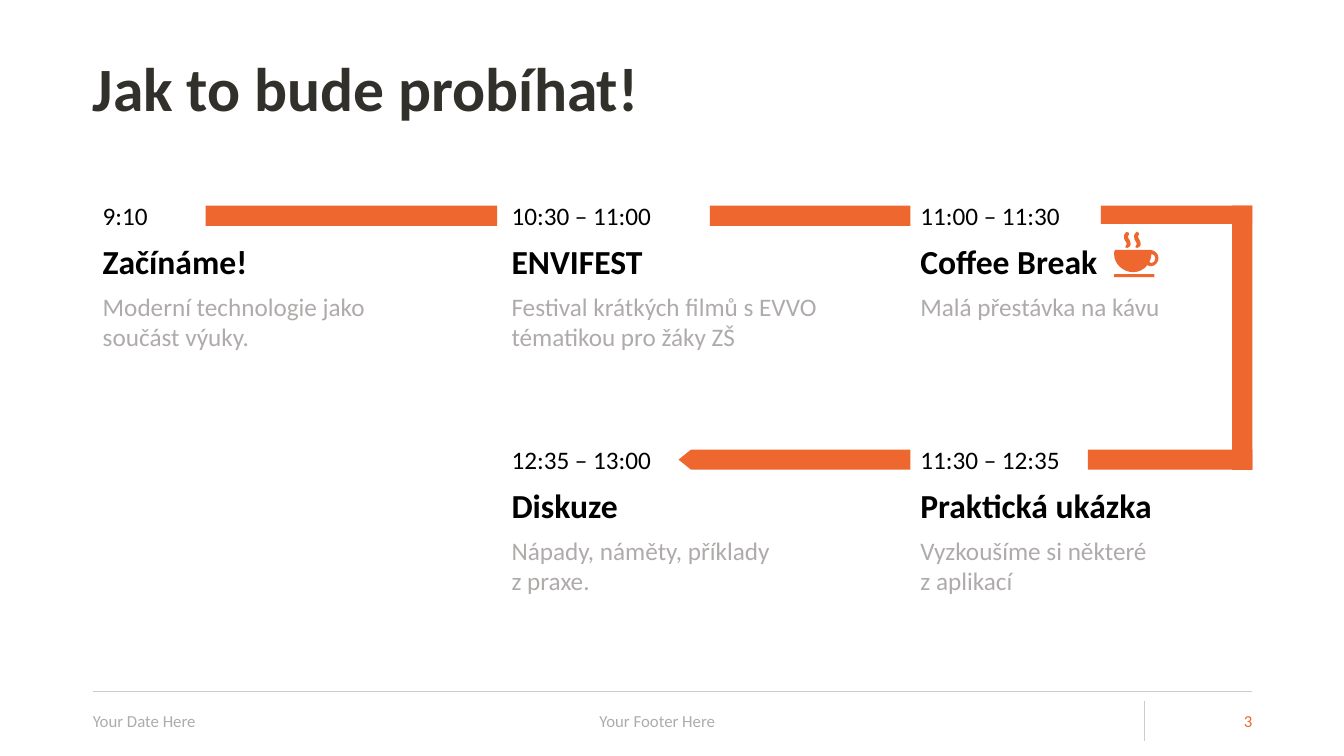
from pptx import Presentation
from pptx.dml.color import RGBColor
from pptx.enum.shapes import MSO_CONNECTOR, MSO_SHAPE
from pptx.enum.text import MSO_ANCHOR, PP_ALIGN
from pptx.oxml.ns import qn
from pptx.util import Inches, Pt

LINE = MSO_CONNECTOR.STRAIGHT
ARROW, RECT = MSO_SHAPE.PENTAGON, MSO_SHAPE.RECTANGLE
TOP, MIDDLE = MSO_ANCHOR.TOP, MSO_ANCHOR.MIDDLE
LEFT, CENTER, RIGHT = PP_ALIGN.LEFT, PP_ALIGN.CENTER, PP_ALIGN.RIGHT

HUE = {"title": "31302B", "black": "000000", "grey": "AFABAB",
       "orange": "EE672F", "rule": "CECDC7"}
FONT = "Calibri"

# Grid in inches: three columns, two rows
EDGE, END = 0.92, 12.42
WIDE, STEP = 3.39, 4.055
HEAD, DROP = 1.94, 2.42
THICK = 0.2
FOOT, TALL = 6.95, 0.4

# Column, row, time, name, detail
STOPS = [
    (0, 0, "9:10", "Začínáme!", "Moderní technologie jako součást výuky."),
    (1, 0, "10:30 – 11:00", "ENVIFEST",
     "Festival krátkých filmů s EVVO tématikou pro žáky ZŠ"),
    (2, 0, "11:00 – 11:30", "Coffee Break", "Malá přestávka na kávu"),
    (1, 1, "12:35 – 13:00", "Diskuze", "Nápady, náměty, příklady \nz praxe."),
    (2, 1, "11:30 – 12:35", "Praktická ukázka",
     "Vyzkoušíme si některé \nz aplikací"),
]

# Icon outlines in hundredths of an inch: a start, then curves of three
# points or lines of one
CUP = [
    [(19, 41), [(25, 41), (30, 38), (33, 34)], [(34, 35), (35, 35), (37, 35)],
     [(41, 35), (44, 31), (44, 27)], [(44, 23), (41, 20), (37, 19)], [(1, 19)],
     [(0, 20), (0, 22), (0, 23)], [(0, 33), (9, 41), (19, 41)]],
    [(37, 23), [(39, 23), (41, 25), (41, 27)], [(41, 30), (39, 32), (37, 32)],
     [(36, 32), (36, 31), (35, 31)], [(36, 29), (37, 26), (37, 23)]],
]
STEAM = [
    [(12, 14), [(10, 15), (11, 18), (13, 17)], [(16, 16), (17, 14), (16, 11)],
     [(16, 10), (15, 9), (14, 7)], [(14, 7), (13, 5), (14, 5)],
     [(16, 3), (14, 0), (12, 1)], [(10, 3), (9, 5), (10, 8)],
     [(10, 9), (14, 13), (12, 14)]],
]


def color(name):
    return RGBColor.from_string(HUE[name])


def col(n):
    return EDGE + n * STEP


def row(n):
    return HEAD + n * DROP


def text(slide, words, box, size, hue, bold=False, align=LEFT, anchor=TOP,
         pads=(0.1, 0.1), lead=None):
    frame = slide.shapes.add_textbox(*map(Inches, box)).text_frame
    frame.word_wrap = True
    frame.vertical_anchor = anchor
    frame.margin_left, frame.margin_right = map(Inches, pads)
    para = frame.paragraphs[0]
    para.text = words
    para.alignment = align
    para.line_spacing = lead
    font = para.font
    font.name, font.size, font.bold = FONT, Pt(size), bold
    font.color.rgb = color(hue)


def rule(slide, x1, y1, x2, y2):
    line = slide.shapes.add_connector(LINE, *map(Inches, (x1, y1, x2, y2)))
    line.line.color.rgb = color("rule")
    line.line.width = Pt(0.5)
    props = line._element.spPr
    props.append(props.makeelement(qn("a:effectLst"), {}))


def paint(shape):
    shape.shadow.inherit = False
    shape.fill.solid()
    shape.fill.fore_color.rgb = color("orange")
    shape.line.fill.background()


def bar(slide, x, y, width, height=THICK, turn=0, tip=0):
    shape = slide.shapes.add_shape(ARROW, *map(Inches, (x, y, width, height)))
    shape.adjustments[0] = tip
    shape.rotation = turn
    paint(shape)


def bend(shape, curves):
    """Merge the three line steps of each curve into one cubic step."""
    steps = iter(list(shape._element.iter(qn("a:lnTo"))))
    for curve in curves:
        head, *rest = [next(steps) for _ in curve]
        if rest:
            head.tag = qn("a:cubicBezTo")
        for step in rest:
            head.append(step[0])
            step.getparent().remove(step)


def trace(slide, loops, x, y):
    pen = None
    for start, *curves in loops:
        if pen is None:
            pen = slide.shapes.build_freeform(*start, scale=Inches(0.01))
        else:
            pen.move_to(*start)
        pen.add_line_segments([spot for curve in curves for spot in curve])
    shape = pen.convert_to_shape(Inches(x), Inches(y))
    bend(shape, [curve for loop in loops for curve in loop[1:]])
    paint(shape)


def stop(slide, c, r, time, name, note):
    x, y = col(c), row(r)
    deep = 0.4 if name == "Coffee Break" else 0.71
    text(slide, name, (x, y + 0.4, WIDE, 0.5), 24, "black", bold=True)
    text(slide, time, (x, y, 1.66, 0.4), 18, "black")
    text(slide, note, (x, y + 0.9, WIDE, deep), 18, "grey")


def route(slide):
    high, low = row(0) + 0.1, row(1) + 0.1
    for x, end, height in ((2.04, 4.93, THICK), (7.04, col(2), THICK),
                           (10.92, END, 0.18)):
        bar(slide, x, high, end - x, height)
    for x, end, tip in ((6.73, col(2), 0.62), (10.79, END, 0)):
        bar(slide, x, low, end - x, turn=180, tip=tip)
    # Side bar, turned about its centre
    span = low + THICK - high
    bar(slide, END - (THICK + span) / 2, (high + low) / 2, span, turn=90)


def coffee(slide, x, y):
    trace(slide, CUP, x, y)
    saucer = slide.shapes.add_shape(
        RECT, *map(Inches, (x, y + 0.43, 0.4, 0.03)))
    paint(saucer)
    for shift in (0, 0.1):
        trace(slide, STEAM, x + shift, y)


def footer(slide):
    for words, x, width, hue, align, pads in (
            ("Your Date Here", EDGE, 1.42, "grey", LEFT, (0, 0)),
            ("Your Footer Here", 2.89, 7.56, "grey", CENTER, (0.1, 0.4)),
            ("3", 11.47, 0.95, "orange", RIGHT, (0, 0))):
        text(slide, words, (x, FOOT, width, TALL), 12, hue, align=align,
             anchor=MIDDLE, pads=pads)


def main():
    deck = Presentation()
    deck.slide_width, deck.slide_height = Inches(13.33), Inches(7.5)
    slide = deck.slides.add_slide(deck.slide_layouts[6])
    # Rules and title
    rule(slide, EDGE, 6.86, END, 6.86)
    rule(slide, 11.35, FOOT, 11.35, FOOT + TALL)
    text(slide, "Jak to bude probíhat!", (EDGE, 0.18, 10.47, 1.45), 44,
         "title", bold=True, anchor=MIDDLE, pads=(0, 0.1), lead=0.9)
    # Schedule
    for item in STOPS:
        stop(slide, *item)
    route(slide)
    coffee(slide, 11.05, 2.29)
    footer(slide)
    deck.save("out.pptx")


if __name__ == "__main__":
    main()
